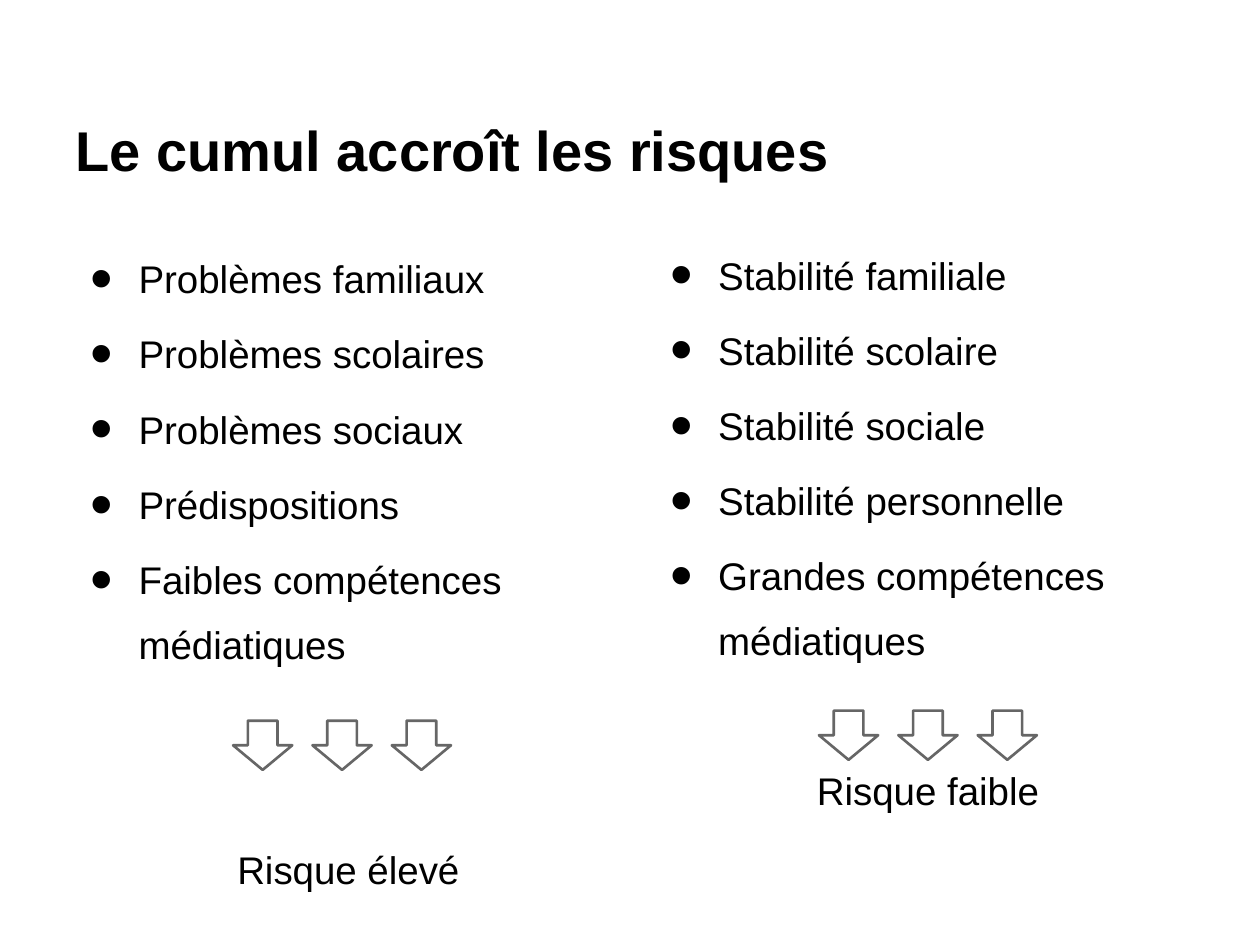
from dataclasses import dataclass

from lxml import etree
from pptx import Presentation
from pptx import util as u
from pptx.dml.color import RGBColor
from pptx.enum import shapes, text
from pptx.oxml.ns import qn

FONT = "Arial"
BLACK = "000000"
WHITE = "FFFFFF"
GRAY = "666666"
ARROW_COUNT = 3
ARROW_STEP = 45.36
ARROW_WIDTH = 33.84
ARROW_HEIGHT = 28.08


@dataclass
class Column:
    left: float
    top: float
    items: list[str]
    conclusion: str
    conclusion_gap: float
    arrows_left: float
    arrows_top: float


COLUMNS = [
    Column(38.16, 128.16,
           ["Problèmes familiaux", "Problèmes scolaires", "Problèmes sociaux",
            "Prédispositions", "Faibles compétences médiatiques"],
           "Risque élevé", 92, 133.2, 411.84),
    Column(369.36, 126,
           ["Stabilité familiale", "Stabilité scolaire", "Stabilité sociale",
            "Stabilité personnelle", "Grandes compétences médiatiques"],
           "Risque faible", 49, 468, 406.08),
]


def color(value: str) -> RGBColor:
    return RGBColor.from_string(value)


def place(shape, left: float, top: float, width: float, height: float, anchor) -> None:
    shape.left, shape.top = u.Pt(left), u.Pt(top)
    shape.width, shape.height = u.Pt(width), u.Pt(height)
    frame = shape.text_frame
    frame.word_wrap = True
    frame.auto_size = text.MSO_AUTO_SIZE.NONE
    frame.vertical_anchor = anchor
    frame.margin_left = frame.margin_right = u.Pt(7.2)
    frame.margin_top = frame.margin_bottom = u.Pt(7.2)


def add_run(paragraph, content: str, size: float, bold: bool = False) -> None:
    run = paragraph.add_run()
    run.text = content
    run.font.name = FONT
    run.font.size = u.Pt(size)
    run.font.bold = bold
    run.font.color.rgb = color(BLACK)


def set_bullet(paragraph, margin: float, indent: float, bullet: str = "") -> None:
    properties = paragraph._p.get_or_add_pPr()
    properties.set("marL", str(u.Pt(margin)))
    properties.set("indent", str(u.Pt(indent)))
    if not bullet:
        etree.SubElement(properties, qn("a:buNone"))
        return
    bullet_color = etree.SubElement(properties, qn("a:buClr"))
    etree.SubElement(bullet_color, qn("a:srgbClr"), val=BLACK)
    etree.SubElement(properties, qn("a:buSzPct"), val="167000")
    etree.SubElement(properties, qn("a:buFont"), typeface=FONT)
    etree.SubElement(properties, qn("a:buChar"), char=bullet)


def fill_column(placeholder, column: Column) -> None:
    place(placeholder, column.left, column.top, 314.64, 390.96, text.MSO_ANCHOR.TOP)
    frame = placeholder.text_frame
    for index, item in enumerate(column.items + [column.conclusion]):
        paragraph = frame.add_paragraph() if index else frame.paragraphs[0]
        is_item = index < len(column.items)
        paragraph.line_spacing = 1.4
        paragraph.space_before = u.Pt(6 if is_item else column.conclusion_gap)
        if is_item:
            set_bullet(paragraph, 33.84, -27.36, "•")
        else:
            paragraph.alignment = text.PP_ALIGN.CENTER
            set_bullet(paragraph, 7.2, 0)
        add_run(paragraph, item, 22)


def add_arrows(slide, column: Column) -> None:
    for index in range(ARROW_COUNT):
        arrow = slide.shapes.add_shape(
            shapes.MSO_SHAPE.DOWN_ARROW,
            u.Pt(column.arrows_left + index * ARROW_STEP), u.Pt(column.arrows_top),
            u.Pt(ARROW_WIDTH), u.Pt(ARROW_HEIGHT))
        arrow.shadow.inherit = False
        arrow.fill.solid()
        arrow.fill.fore_color.rgb = color(WHITE)
        arrow.line.color.rgb = color(GRAY)
        arrow.line.width = u.Pt(1.5)


def main() -> None:
    presentation = Presentation()
    presentation.slide_width, presentation.slide_height = u.Pt(720), u.Pt(540)
    slide = presentation.slides.add_slide(presentation.slide_layouts[3])
    title, *bodies = slide.placeholders
    place(title, 36, 21.6, 648, 90, text.MSO_ANCHOR.BOTTOM)
    heading = title.text_frame.paragraphs[0]
    heading.alignment = text.PP_ALIGN.LEFT
    add_run(heading, "Le cumul accroît les risques", 32, bold=True)
    for body, column in zip(bodies, COLUMNS):
        fill_column(body, column)
    for column in COLUMNS:
        add_arrows(slide, column)
    presentation.save("out.pptx")


if __name__ == "__main__":
    main()
